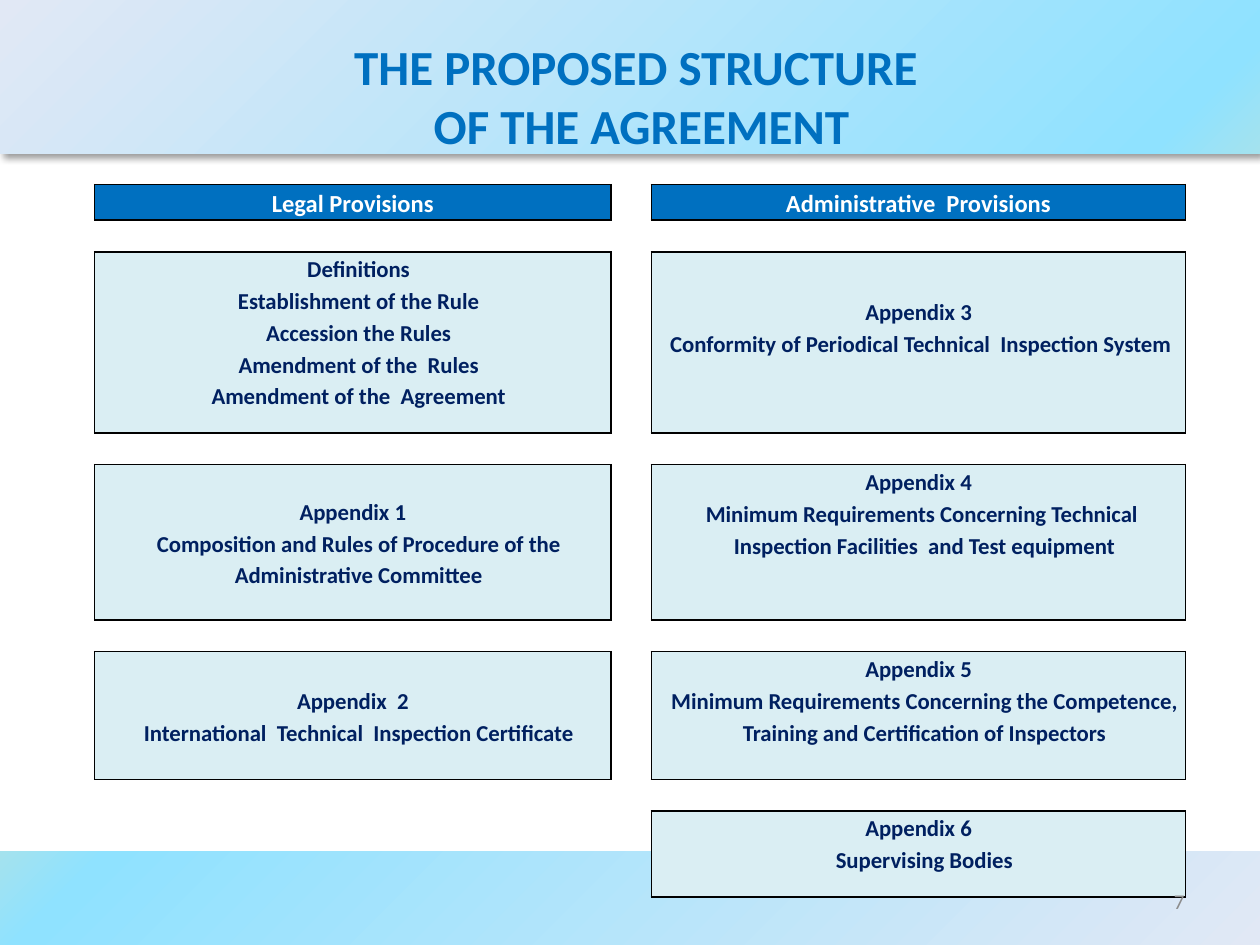
from dataclasses import dataclass

from lxml import etree
from pptx import Presentation
from pptx.dml.color import RGBColor
from pptx.enum.shapes import MSO_SHAPE
from pptx.enum.text import MSO_ANCHOR, PP_ALIGN
from pptx.oxml import parse_xml
from pptx.oxml.ns import qn
from pptx.util import Pt

RECTANGLE = MSO_SHAPE.RECTANGLE
TOP, MIDDLE = MSO_ANCHOR.TOP, MSO_ANCHOR.MIDDLE
LEFT, CENTER, RIGHT = PP_ALIGN.LEFT, PP_ALIGN.CENTER, PP_ALIGN.RIGHT
DRAWING = 'xmlns:a="http://schemas.openxmlformats.org/drawingml/2006/main"'
NO_GRID_STYLE = "{2D5ABB26-0587-4C30-8999-92F81FD0307C}"
SLIDE_WIDTH, SLIDE_HEIGHT = 720, 540


@dataclass(frozen=True)
class Theme:
    """Colours, font and type sizes of the slide."""

    font: str = "Calibri"
    accent: str = "0070C0"
    ink: str = "002060"
    panel: str = "DAEEF3"
    white: str = "FFFFFF"
    border: str = "000000"
    number: str = "8C8C8C"
    gradient: tuple = ((0, "A4E2EE"), (8, "8FE2FF"), (100, "E1E8F5"))
    title_size: float = 28
    heading_size: float = 14
    body_size: float = 13
    number_size: float = 12


@dataclass(frozen=True)
class Band:
    """A full-width gradient band with its focus corner."""

    top: float
    height: float
    focus: str
    shadow: bool = False


@dataclass(frozen=True)
class Panel:
    """A filled table cell with its lines of text."""

    row: int
    column: int
    lines: tuple
    anchor: MSO_ANCHOR = TOP
    body_align: PP_ALIGN = CENTER
    bottom: float = 0
    heading: bool = False


THEME = Theme()
BANDS = (
    Band(0, 87.84, 'l="100000" t="100000"', shadow=True),
    Band(486.72, 53.28, 'r="100000" b="100000"'),
)
COLUMN_WIDTHS = (295.2, 23.04, 305.28)
PANEL_HEIGHTS = (20.3, 103.5, 88.8, 73.1, 49)
GAP = 18.1
INDENT = 6.5
PANELS = (
    Panel(0, 0, ("Legal Provisions",), heading=True),
    Panel(0, 2, ("Administrative  Provisions",), heading=True),
    Panel(1, 0, ("Definitions", "Establishment of the Rule", "Accession the Rules",
                 "Amendment of the  Rules", "Amendment of the  Agreement")),
    Panel(1, 2, ("Appendix 3", "Conformity of Periodical Technical  Inspection System"),
          anchor=MIDDLE, body_align=LEFT, bottom=GAP),
    Panel(2, 0, ("Appendix 1",
                 "Composition and Rules of Procedure of the Administrative Committee"),
          anchor=MIDDLE),
    Panel(2, 2, ("Appendix 4", "Minimum Requirements Concerning Technical  "
                 "Inspection Facilities  and Test equipment")),
    Panel(3, 0, ("Appendix  2", "International  Technical  Inspection Certificate"),
          anchor=MIDDLE),
    Panel(3, 2, ("Appendix 5", "Minimum Requirements Concerning the Competence, "
                 "Training and Certification of Inspectors")),
    Panel(4, 2, ("Appendix 6", "Supervising Bodies")),
)


def write_text(paragraph, text: str, *, size: float, color: str, bold: bool = True,
               align: PP_ALIGN = CENTER, spacing: float | None = None,
               indent: float = 0) -> None:
    """Fill a paragraph with formatted text."""
    paragraph.text = text
    paragraph.alignment = align
    if spacing:
        paragraph.line_spacing = spacing
    if indent:
        paragraph._p.get_or_add_pPr().set("marL", str(Pt(indent)))
    for run in paragraph.runs:
        run.font.name = THEME.font
        run.font.size = Pt(size)
        run.font.bold = bold
        run.font.color.rgb = RGBColor.from_string(color)


def draw_band(slide, band: Band) -> None:
    """Draw a gradient band across the slide."""
    shape = slide.shapes.add_shape(
        RECTANGLE, 0, Pt(band.top), Pt(SLIDE_WIDTH), Pt(band.height))
    shape.line.fill.background()
    shape.shadow.inherit = False
    stops = "".join(f'<a:gs pos="{position * 1000}"><a:srgbClr val="{color}"/></a:gs>'
                    for position, color in THEME.gradient)
    properties = shape.element.spPr
    properties.find(qn("a:prstGeom")).addnext(parse_xml(
        f'<a:gradFill {DRAWING} rotWithShape="1"><a:gsLst>{stops}</a:gsLst>'
        f'<a:path path="circle"><a:fillToRect {band.focus}/></a:path></a:gradFill>'))
    if band.shadow:
        properties.find(qn("a:effectLst")).append(parse_xml(
            f'<a:outerShdw {DRAWING} blurRad="{Pt(4)}" dist="{Pt(3)}" dir="2700000" '
            f'algn="tl" rotWithShape="0"><a:srgbClr val="{THEME.border}">'
            '<a:alpha val="40000"/></a:srgbClr></a:outerShdw>'))


def draw_title(slide) -> None:
    """Place the title in front of the bands."""
    title = slide.shapes.title
    title.left, title.top, title.width, title.height = Pt(42.5), Pt(26), Pt(648), Pt(57)
    title.text_frame.vertical_anchor = MIDDLE
    write_text(title.text_frame.paragraphs[0],
               "THE PROPOSED STRUCTURE \vOF THE AGREEMENT",
               size=THEME.title_size, color=THEME.accent)
    title.element.getparent().append(title.element)


def fill_panel(cell, panel: Panel) -> None:
    """Format a table cell as a bordered panel and write its lines."""
    properties = cell._tc.get_or_add_tcPr()
    for side in ("lnL", "lnR", "lnT", "lnB"):
        properties.append(parse_xml(
            f'<a:{side} {DRAWING} w="{Pt(1)}"><a:solidFill>'
            f'<a:srgbClr val="{THEME.border}"/></a:solidFill></a:{side}>'))
    cell.fill.solid()
    cell.fill.fore_color.rgb = RGBColor.from_string(
        THEME.accent if panel.heading else THEME.panel)
    cell.margin_left = cell.margin_right = Pt(4.3)
    cell.margin_bottom = Pt(panel.bottom)
    cell.vertical_anchor = panel.anchor
    for index, line in enumerate(panel.lines):
        frame = cell.text_frame
        paragraph = frame.add_paragraph() if index else frame.paragraphs[0]
        leading = panel.heading or line.startswith("Appendix")
        write_text(paragraph, line, spacing=1.15,
                   size=THEME.heading_size if panel.heading else THEME.body_size,
                   color=THEME.white if panel.heading else THEME.ink,
                   align=CENTER if leading else panel.body_align,
                   indent=0 if leading else INDENT)


def draw_table(slide) -> None:
    """Draw the provisions table with gap rows between the panels."""
    heights = [GAP] * (2 * len(PANEL_HEIGHTS) - 1)
    heights[::2] = PANEL_HEIGHTS
    table = slide.shapes.add_table(
        len(heights), len(COLUMN_WIDTHS), Pt(54), Pt(105.5),
        Pt(sum(COLUMN_WIDTHS)), Pt(sum(heights))).table
    table.first_row = table.horz_banding = False
    table._tbl.tblPr.find(qn("a:tableStyleId")).text = NO_GRID_STYLE
    for column, width in zip(table.columns, COLUMN_WIDTHS):
        column.width = Pt(width)
    for row, height in zip(table.rows, heights):
        row.height = Pt(height)
    panels = {(2 * panel.row, panel.column): panel for panel in PANELS}
    for row in range(len(heights)):
        for column in range(len(COLUMN_WIDTHS)):
            cell = table.cell(row, column)
            cell.margin_top = cell.margin_bottom = 0
            if (row, column) in panels:
                fill_panel(cell, panels[row, column])
            else:
                cell.fill.background()
                paragraph = cell.text_frame.paragraphs[0]
                etree.SubElement(paragraph._p, qn("a:endParaRPr")).set("sz", "800")


def draw_slide_number(slide) -> None:
    """Write the slide number at the lower right."""
    frame = slide.shapes.add_textbox(Pt(516), Pt(500.4), Pt(168), Pt(28.8)).text_frame
    frame.word_wrap = True
    frame.vertical_anchor = MIDDLE
    write_text(frame.paragraphs[0], "7", size=THEME.number_size,
               color=THEME.number, bold=False, align=RIGHT)


def main() -> None:
    """Build and save the presentation."""
    presentation = Presentation()
    presentation.slide_width, presentation.slide_height = Pt(SLIDE_WIDTH), Pt(SLIDE_HEIGHT)
    slide = presentation.slides.add_slide(presentation.slide_layouts[5])
    for band in BANDS:
        draw_band(slide, band)
    draw_title(slide)
    draw_table(slide)
    draw_slide_number(slide)
    presentation.save("out.pptx")


if __name__ == "__main__":
    main()
